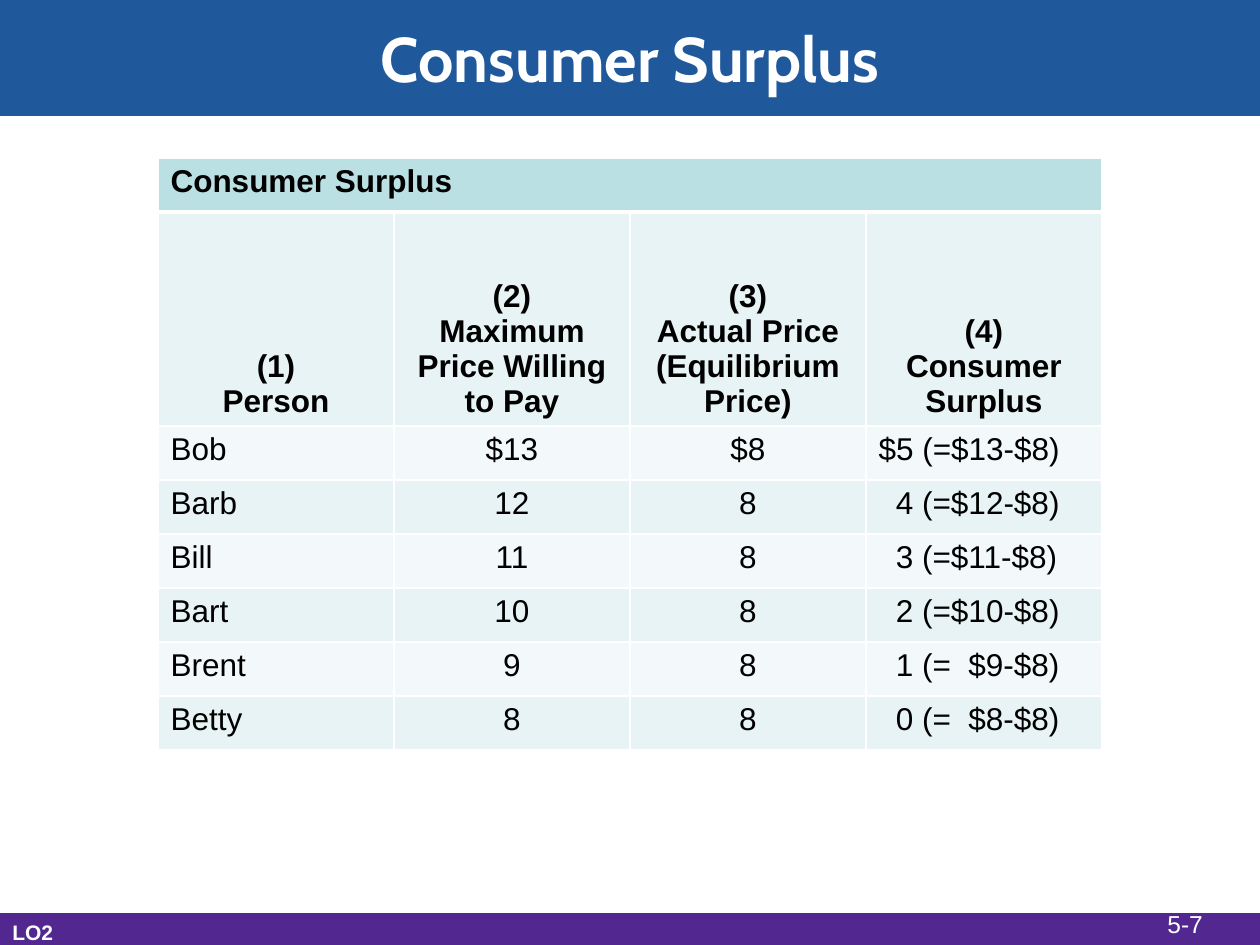
import pptx
import pptx.util
import pptx.dml.color
import pptx.enum.text
import pptx.enum.shapes
import pptx.oxml.ns
import lxml.etree

Align = pptx.enum.text.PP_ALIGN
Anchor = pptx.enum.text.MSO_ANCHOR
Fit = pptx.enum.text.MSO_AUTO_SIZE

HEADS = [
    "(1)\nPerson",
    "(2)\nMaximum Price Willing to Pay",
    "(3)\nActual Price (Equilibrium Price)",
    "(4)\nConsumer Surplus",
]
BUYERS = [
    ("Bob", "$13", "$8", "$5 (=$13-$8)"),
    ("Barb", "12", "8", "4 (=$12-$8)"),
    ("Bill", "11", "8", "3 (=$11-$8)"),
    ("Bart", "10", "8", "2 (=$10-$8)"),
    ("Brent", "9", "8", "1 (=  $9-$8)"),
    ("Betty", "8", "8", "0 (=  $8-$8)"),
]
ALIGNS = [Align.LEFT, Align.CENTER, Align.CENTER, Align.JUSTIFY]
BANDS = ["F3F9FA", "E7F3F4"]


def px(n):
    return pptx.util.Emu(round(n * 914400 / 126))


def color(code):
    return pptx.dml.color.RGBColor.from_string(code)


def write(frame, text, size=18, font="Arial", ink="000000", bold=False, align=Align.LEFT):
    frame.text = text
    for para in frame.paragraphs:
        para.alignment = align
        for run in para.runs:
            run.font.size = pptx.util.Pt(size)
            run.font.name = font
            run.font.bold = bold
            run.font.color.rgb = color(ink)


def bar(slide, top, high, fill):
    shape = slide.shapes.add_shape(
        pptx.enum.shapes.MSO_SHAPE.RECTANGLE, px(0), px(top), px(1260), px(high))
    shape.shadow.inherit = False
    shape.fill.solid()
    shape.fill.fore_color.rgb = color(fill)
    shape.line.color.rgb = color(fill)
    shape.line.width = pptx.util.Pt(0.75)


def title(slide, text):
    shape = slide.shapes.title
    shape.left, shape.top, shape.width, shape.height = px(0), px(0), px(1260), px(115)
    frame = shape.text_frame
    frame.auto_size = Fit.NONE
    frame.vertical_anchor = Anchor.MIDDLE
    write(frame, text, size=36, font="Cabin", ink="FFFFFF", bold=True, align=Align.CENTER)
    slide.shapes._spTree.append(shape._element)


def label(slide, text, left, top, wide, high, **style):
    frame = slide.shapes.add_textbox(px(left), px(top), px(wide), px(high)).text_frame
    frame.word_wrap = True
    frame.auto_size = Fit.SHAPE_TO_FIT_TEXT
    write(frame, text, ink="FFFFFF", **style)


def border(cell, **widths):
    props = cell._tc.get_or_add_tcPr()
    for side in "LRTB":
        width = pptx.util.Pt(widths.get(side, 1))
        line = lxml.etree.SubElement(props, pptx.oxml.ns.qn("a:ln" + side), w=str(width))
        solid = lxml.etree.SubElement(line, pptx.oxml.ns.qn("a:solidFill"))
        lxml.etree.SubElement(solid, pptx.oxml.ns.qn("a:srgbClr"), val="FFFFFF")


def paint(cell, fill, **widths):
    border(cell, **widths)
    cell.fill.solid()
    cell.fill.fore_color.rgb = color(fill)


def grid(slide):
    highs = [54, 214] + [54] * len(BUYERS)
    table = slide.shapes.add_table(
        len(highs), len(HEADS), px(158), px(158), px(944), px(sum(highs))).table
    for row, high in zip(table.rows, highs):
        row.height = px(high)
    for col, head in enumerate(HEADS):
        table.columns[col].width = px(236)
        paint(table.cell(0, col), "BBE0E3", B=3)
        cell = table.cell(1, col)
        paint(cell, BANDS[1], T=3)
        cell.vertical_anchor = Anchor.BOTTOM
        write(cell.text_frame, head, bold=True, align=Align.CENTER)
    table.cell(0, 0).merge(table.cell(0, len(HEADS) - 1))
    write(table.cell(0, 0).text_frame, "Consumer Surplus", bold=True)
    for row, buyer in enumerate(BUYERS):
        for col, text in enumerate(buyer):
            cell = table.cell(row + 2, col)
            paint(cell, BANDS[row % 2])
            write(cell.text_frame, text, align=ALIGNS[col])
        if row:
            cell.margin_left = px(30)


def main():
    deck = pptx.Presentation()
    deck.slide_width, deck.slide_height = px(1260), px(945)
    slide = deck.slides.add_slide(deck.slide_layouts.get_by_name("Title Only"))
    bar(slide, 0, 115, "20589C")
    title(slide, "Consumer Surplus")
    bar(slide, 914, 31, "522890")
    label(slide, "LO2", 0, 913, 72, 38, size=12, bold=True)
    grid(slide)
    label(slide, "5-7", 1155, 903, 72, 42, size=14)
    deck.save("out.pptx")


if __name__ == "__main__":
    main()
